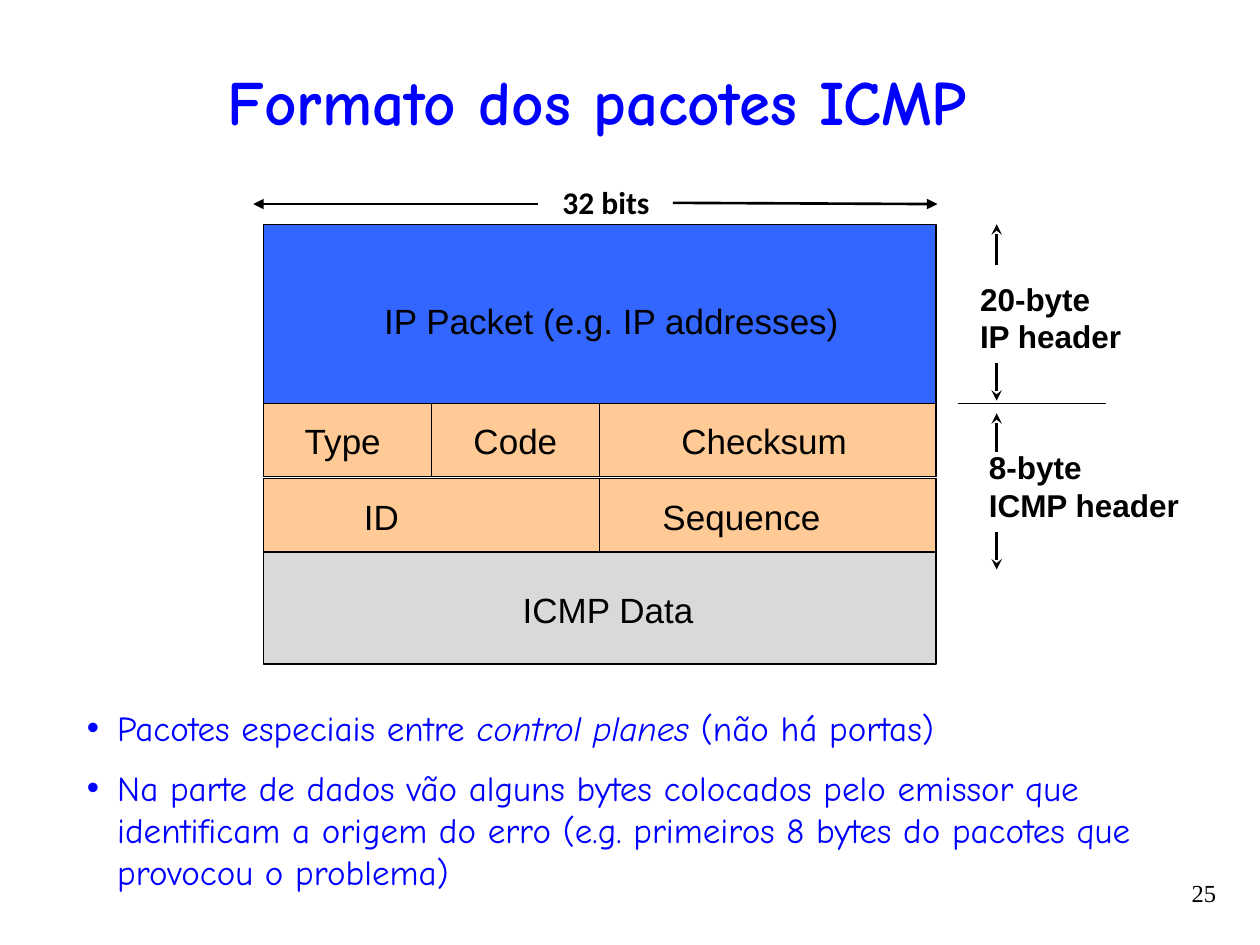
from lxml.etree import SubElement
from pptx import Presentation
from pptx.dml.color import RGBColor
from pptx.enum.shapes import MSO_CONNECTOR, MSO_SHAPE
from pptx.enum.text import MSO_ANCHOR, MSO_AUTO_SIZE, PP_ALIGN
from pptx.oxml.ns import qn
from pptx.util import Inches, Pt

COLORS = {"text": "000000", "accent": "0000FF", "ip": "3366FF",
          "icmp": "FFCA95", "data": "D9D9D9"}
HEADING = "Formato dos pacotes ICMP"
POINTS = [
    [("Pacotes especiais entre ", False), ("control planes ", True),
     ("(não há portas)", False)],
    [("Na parte de dados vão alguns bytes colocados pelo emissor que "
      "identificam a origem do erro (e.g. primeiros 8 bytes do pacotes que "
      "provocou o problema)", False)],
]
LEFT, BIT = 2.09, 5.34 / 32
ROWS = [
    (1.78, 1.42, "ip", [("IP Packet (e.g. IP addresses)", 32, 2.95, 2.33, 3.84)]),
    (4.38, 0.89, "data", [("ICMP Data", 32, 4.05, 4.62, 1.57)]),
    (3.2, 0.58, "icmp", [("Type", 8, 2.32, 3.28, 0.81),
                         ("Code", 8, 3.66, 3.28, 0.87),
                         ("Checksum", 16, 5.31, 3.28, 1.53)]),
    (3.8, 0.58, "icmp", [("ID", 16, 2.79, 3.88, 0.48),
                         ("Sequence", 16, 5.16, 3.88, 1.47)]),
]
LABEL = {"name": "Arial", "size": Pt(20)}
SIDE = {"name": "Arial", "size": Pt(18), "bold": True}
NOTES = [
    (["20-byte", "IP header"], (7.68, 2.17, 1.34, 0.7), SIDE, PP_ALIGN.LEFT),
    (["8-byte", "ICMP header"], (7.75, 3.51, 1.73, 0.7), SIDE, PP_ALIGN.LEFT),
    (["32 bits"], (4.36, 1.4, 0.9, 0.4),
     {"name": "Calibri", "size": Pt(18), "bold": True}, PP_ALIGN.CENTER),
    (["25"], (8.75, 6.92, 1, 0.42),
     {"name": "Times New Roman", "size": Pt(14)}, PP_ALIGN.RIGHT),
]
SPAN_X = 7.91
LINES = [
    ((4.27, 1.62), (2.01, 1.62), 1.5, "triangle"),
    ((5.34, 1.61), (7.44, 1.62), 1.5, "triangle"),
    ((SPAN_X, 2.1), (SPAN_X, 1.78), 2, "stealth"),
    ((SPAN_X, 2.88), (SPAN_X, 3.18), 2, "stealth"),
    ((SPAN_X, 3.59), (SPAN_X, 3.28), 2, "stealth"),
    ((SPAN_X, 4.22), (SPAN_X, 4.52), 2, "stealth"),
    ((7.6, 3.2), (8.78, 3.2), 0.75, None),
]


def rgb(name):
    return RGBColor.from_string(COLORS[name])


def style(font, values, color="text"):
    for key, value in values.items():
        setattr(font, key, value)
    font.color.rgb = rgb(color)


def place(holder, *box):
    for key, value in zip(("left", "top", "width", "height"), box):
        setattr(holder, key, Inches(value))


def add_text(slide, lines, box, font, align=PP_ALIGN.LEFT):
    note = slide.shapes.add_textbox(*map(Inches, box))
    note.text_frame.word_wrap = font["name"] == "Times New Roman"
    note.text_frame.text = "\n".join(lines)
    for paragraph in note.text_frame.paragraphs:
        paragraph.alignment = align
        style(paragraph.runs[0].font, font)


def add_field(slide, box, color):
    field = slide.shapes.add_shape(MSO_SHAPE.RECTANGLE, *map(Inches, box))
    field.shadow.inherit = False
    field.fill.solid()
    field.fill.fore_color.rgb = rgb(color)
    field.line.color.rgb = rgb("text")
    field.line.width = Pt(0.75)


def add_line(slide, start, end, width, arrow):
    line = slide.shapes.add_connector(MSO_CONNECTOR.STRAIGHT,
                                      *map(Inches, start + end))
    line.line.color.rgb = rgb("text")
    line.line.width = Pt(width)
    if arrow:
        SubElement(line.line._get_or_add_ln(), qn("a:tailEnd"), type=arrow)
    SubElement(line._element.spPr, qn("a:effectLst"))


def fill_title(title):
    place(title, 0.33, 0.42, 8.82, 0.75)
    title.text_frame.text = HEADING
    title.text_frame.auto_size = MSO_AUTO_SIZE.NONE
    title.text_frame.vertical_anchor = MSO_ANCHOR.MIDDLE
    paragraph = title.text_frame.paragraphs[0]
    paragraph.alignment = PP_ALIGN.CENTER
    style(paragraph.runs[0].font,
          {"name": "Comic Neue", "size": Pt(36), "bold": True}, "accent")


def fill_body(body):
    place(body, 0.59, 5.56, 8.66, 1.73)
    frame = body.text_frame
    frame.auto_size = MSO_AUTO_SIZE.NONE
    for index, point in enumerate(POINTS):
        paragraph = frame.add_paragraph() if index else frame.paragraphs[0]
        paragraph.space_before = Pt(10)
        properties = paragraph._p.get_or_add_pPr()
        properties.set("marL", str(Inches(0.24)))
        properties.set("indent", str(-Inches(0.24)))
        SubElement(properties, qn("a:buChar"), char="•")
        for text, italic in point:
            run = paragraph.add_run()
            run.text = text
            style(run.font, {"name": "Comic Neue", "size": Pt(20),
                             "italic": italic}, "accent")


def main():
    deck = Presentation()
    deck.slide_width, deck.slide_height = Inches(10), Inches(7.5)
    slide = deck.slides.add_slide(deck.slide_layouts[1])
    fill_title(slide.shapes.title)
    fill_body(slide.placeholders[1])
    for top, height, color, fields in ROWS:
        left = LEFT
        for label, bits, label_left, label_top, label_width in fields:
            add_field(slide, (left, top, bits * BIT, height), color)
            add_text(slide, [label], (label_left, label_top, label_width, 0.44), LABEL)
            left += bits * BIT
    for note in NOTES:
        add_text(slide, *note)
    for line in LINES:
        add_line(slide, *line)
    deck.save("out.pptx")


if __name__ == "__main__":
    main()
